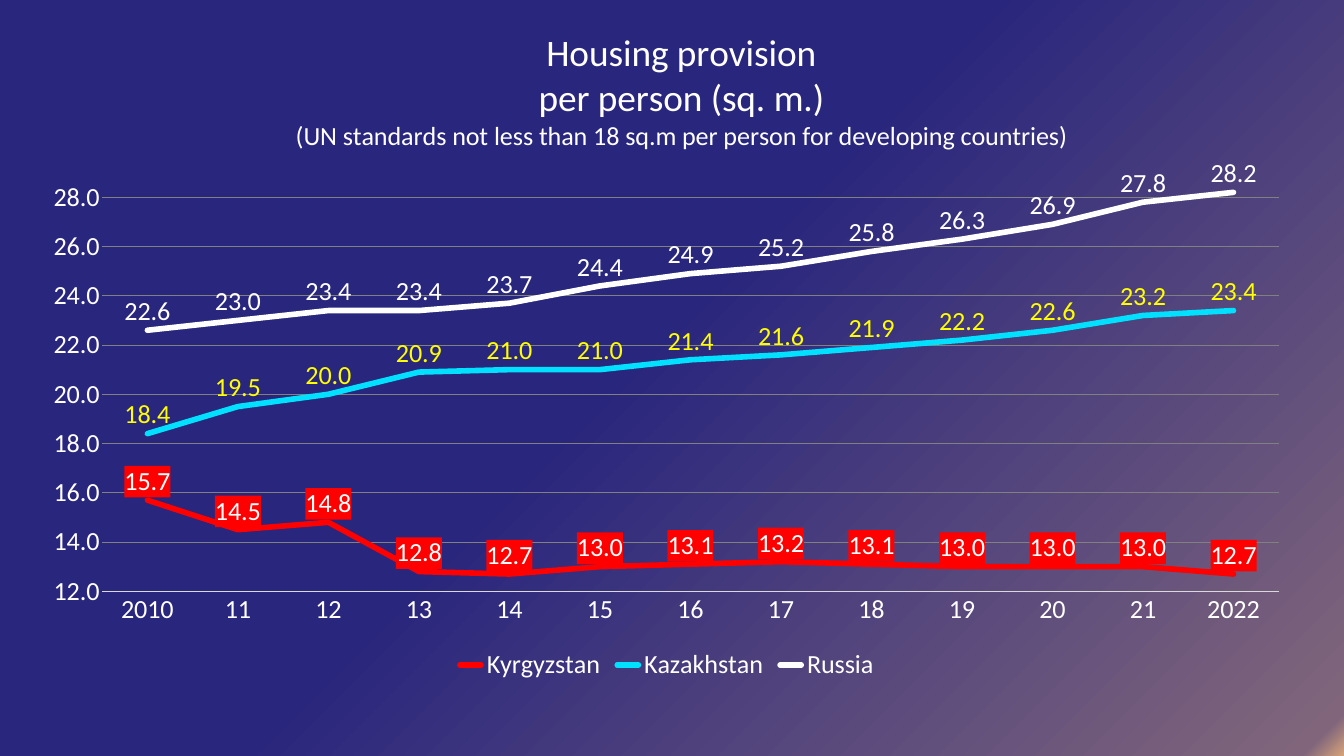
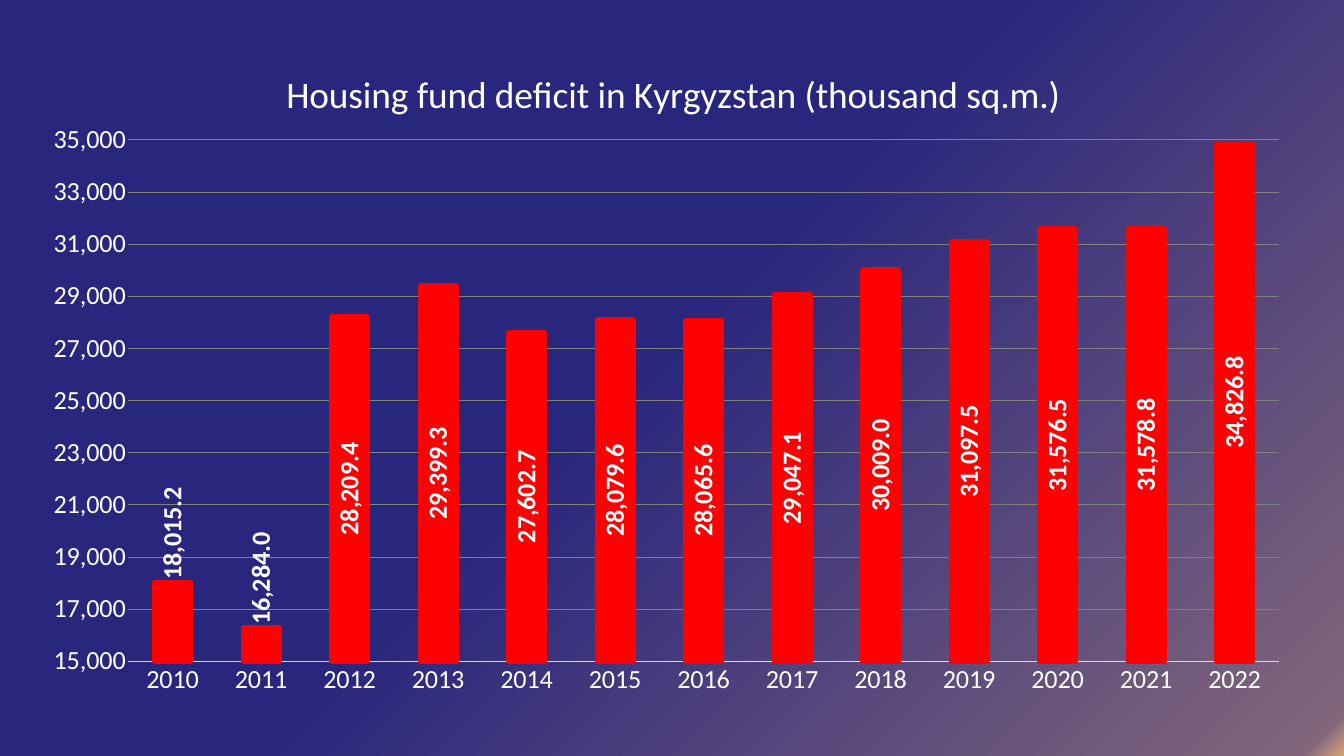
from lxml import etree
from pptx import Presentation
from pptx.chart.data import CategoryChartData
from pptx.dml.color import RGBColor
from pptx.enum.chart import XL_CHART_TYPE, XL_LABEL_POSITION, XL_LEGEND_POSITION, XL_TICK_MARK
from pptx.oxml import parse_xml
from pptx.oxml.ns import nsdecls, qn
from pptx.util import Inches, Pt

LINE = XL_CHART_TYPE.LINE
COLUMN = XL_CHART_TYPE.COLUMN_CLUSTERED
ABOVE = XL_LABEL_POSITION.ABOVE
CENTER = XL_LABEL_POSITION.CENTER
OUTSIDE_END = XL_LABEL_POSITION.OUTSIDE_END
BOTTOM = XL_LEGEND_POSITION.BOTTOM
NO_TICK = XL_TICK_MARK.NONE

FONT = "Calibri"
WHITE = "FFFFFF"
RED = "FF0000"
CYAN = "01E1FF"
YELLOW = "FFFF00"
AXIS = "D9D9D9"
GRID = "808080"
BACKDROP = [(0, "D8A578"), (2, "81667B"), (53, "29267D")]
TITLE_SIZE = 40
TEXT_SIZE = 28

PROVISION_TITLE = [
    "Housing provision",
    "per person (sq. m.)",
    "(UN standards not less than 18 sq.m per person for developing countries)",
]
PROVISION_YEARS = ["2010", *map(str, range(11, 22)), "2022"]
PROVISION = [
    ("Kyrgyzstan", RED, WHITE,
     [15.7, 14.5, 14.8, 12.8, 12.7, 13, 13.1, 13.2, 13.1, 13, 13, 13, 12.7]),
    ("Kazakhstan", CYAN, YELLOW,
     [18.4, 19.5, 20, 20.9, 21, 21, 21.4, 21.6, 21.9, 22.2, 22.6, 23.2, 23.4]),
    ("Russia", WHITE, WHITE,
     [22.6, 23, 23.4, 23.4, 23.7, 24.4, 24.9, 25.2, 25.8, 26.3, 26.9, 27.8, 28.2]),
]
DEFICIT_TITLE = ["Housing fund deficit in Kyrgyzstan (thousand sq.m.)"]
DEFICIT_YEARS = [str(year) for year in range(2010, 2023)]
DEFICIT = [18015.2, 16284, 28209.4, 29399.3, 27602.7, 28079.6, 28065.6,
           29047.1, 30009, 31097.5, 31576.5, 31578.8, 34826.8]


def rgb(color):
    return RGBColor.from_string(color)


def style_font(font, color=WHITE, size=TEXT_SIZE, bold=False):
    font.name = FONT
    font.size = Pt(size)
    font.bold = bold
    font.color.rgb = rgb(color)


def style_line(line, color, width):
    line.color.rgb = rgb(color)
    line.width = Pt(width)


def add_slide(prs):
    slide = prs.slides.add_slide(prs.slide_layouts[6])
    fill = slide.background.fill
    fill.gradient()
    fill.gradient_angle = 135
    stops = next(slide._element.iter(qn("a:gsLst")))
    for stop in list(stops):
        stops.remove(stop)
    for percent, color in BACKDROP:
        stop = etree.SubElement(stops, qn("a:gs"), pos=str(percent * 1000))
        etree.SubElement(stop, qn("a:srgbClr"), val=color)
    return slide


def set_layout(part, index, **settings):
    for old in part.findall(qn("c:layout")):
        part.remove(old)
    layout = parse_xml(f"<c:layout {nsdecls('c')}><c:manualLayout/></c:layout>")
    for tag, value in settings.items():
        etree.SubElement(layout[0], qn(f"c:{tag}"), val=str(value))
    part.insert(index, layout)


def place_title(chart, box, lines, left, top):
    frame = chart.chart_title.text_frame
    frame.text = "\n".join(lines)
    for number, paragraph in enumerate(frame.paragraphs):
        style_font(paragraph.font, size=TITLE_SIZE if number < 2 else TEXT_SIZE)
    set_layout(chart.chart_title._element, 1, xMode="edge", yMode="edge",
               x=left / box[2], y=top / box[3])


def place_plot(chart, box, left, top, width, height):
    area = next(chart._chartSpace.iter(qn("c:plotArea")))
    set_layout(area, 0, layoutTarget="inner", xMode="edge", yMode="edge",
               x=left / box[2], y=top / box[3], w=width / box[2], h=height / box[3])


def style_axes(chart, low, high, step, number_format):
    years, values = chart.category_axis, chart.value_axis
    for axis in (years, values):
        axis.major_tick_mark = axis.minor_tick_mark = NO_TICK
        style_font(axis.tick_labels.font)
    style_line(years.format.line, AXIS, 0.75)
    values.format.line.fill.background()
    values.minimum_scale, values.maximum_scale = low, high
    values.major_unit = step
    values.has_major_gridlines = True
    style_line(values.major_gridlines.format.line, GRID, 0.75)
    values.tick_labels.number_format = number_format
    values.tick_labels.number_format_is_linked = False


def label_series(series, color, position, number_format, bold=False):
    labels = series.data_labels
    labels.show_value = True
    labels.position = position
    labels.number_format = number_format
    labels.number_format_is_linked = False
    style_font(labels.font, color, bold=bold)
    return labels


def add_chart(slide, box, kind, years, rows, number_format):
    data = CategoryChartData(number_format=number_format)
    data.categories = years
    for name, values in rows:
        data.add_series(name, values)
    chart = slide.shapes.add_chart(kind, *map(Inches, box), data).chart
    style_font(chart.font)
    chart.plots[0].vary_by_categories = False
    return chart


def fill_labels(labels, color):
    text = labels._element.find(qn("c:txPr"))
    text.addprevious(parse_xml(
        f'<c:spPr {nsdecls("c", "a")}><a:solidFill><a:srgbClr val="{color}"/>'
        "</a:solidFill></c:spPr>"))


def provision_chart(slide, box):
    rows = [(name, values) for name, _, _, values in PROVISION]
    chart = add_chart(slide, box, LINE, PROVISION_YEARS, rows, "0.0")
    place_title(chart, box, PROVISION_TITLE, 3.95, 0.21)
    place_plot(chart, box, 1.1, 2.36, 17.51, 6.23)
    style_axes(chart, 12, 29, 2, "0.0")
    chart.has_legend = True
    chart.legend.position = BOTTOM
    chart.legend.include_in_layout = False
    style_font(chart.legend.font)
    for series, (name, color, label_color, _) in zip(chart.plots[0].series, PROVISION):
        series.smooth = False
        style_line(series.format.line, color, 6)
        next(series._element.iter(qn("a:ln"))).set("cap", "rnd")
        labels = label_series(series, label_color, ABOVE, "0.0")
        if name == "Kyrgyzstan":
            fill_labels(labels, RED)


def deficit_chart(slide, box):
    chart = add_chart(slide, box, COLUMN, DEFICIT_YEARS, [("Series 1", DEFICIT)], "#,##0.0")
    chart.has_legend = False
    place_title(chart, box, DEFICIT_TITLE, 3.74, 0.31)
    place_plot(chart, box, 1.49, 1.46, 17.12, 7.76)
    style_axes(chart, 15000, 35000, 2000, "#,##0")
    chart.plots[0].gap_width = 150
    deficit = chart.plots[0].series[0]
    deficit.format.fill.solid()
    deficit.format.fill.fore_color.rgb = rgb(RED)
    style_line(deficit.format.line, RED, 6)
    etree.SubElement(next(deficit._element.iter(qn("a:ln"))), qn("a:round"))
    label_series(deficit, WHITE, CENTER, "#,##0.0", bold=True)
    for short_bar in (0, 1):
        label = deficit.points[short_bar].data_label
        style_font(label.font, bold=True)
        label.position = OUTSIDE_END
    for body in deficit._element.iter(qn("a:bodyPr")):
        body.set("rot", "-5400000")
        body.set("vert", "horz")


def main():
    prs = Presentation()
    prs.slide_width = Inches(20)
    prs.slide_height = Inches(11.25)
    provision_chart(add_slide(prs), (0.42, 0.21, 19, 10))
    deficit_chart(add_slide(prs), (0.42, 0.62, 19, 9.92))
    prs.save("out.pptx")


if __name__ == "__main__":
    main()
